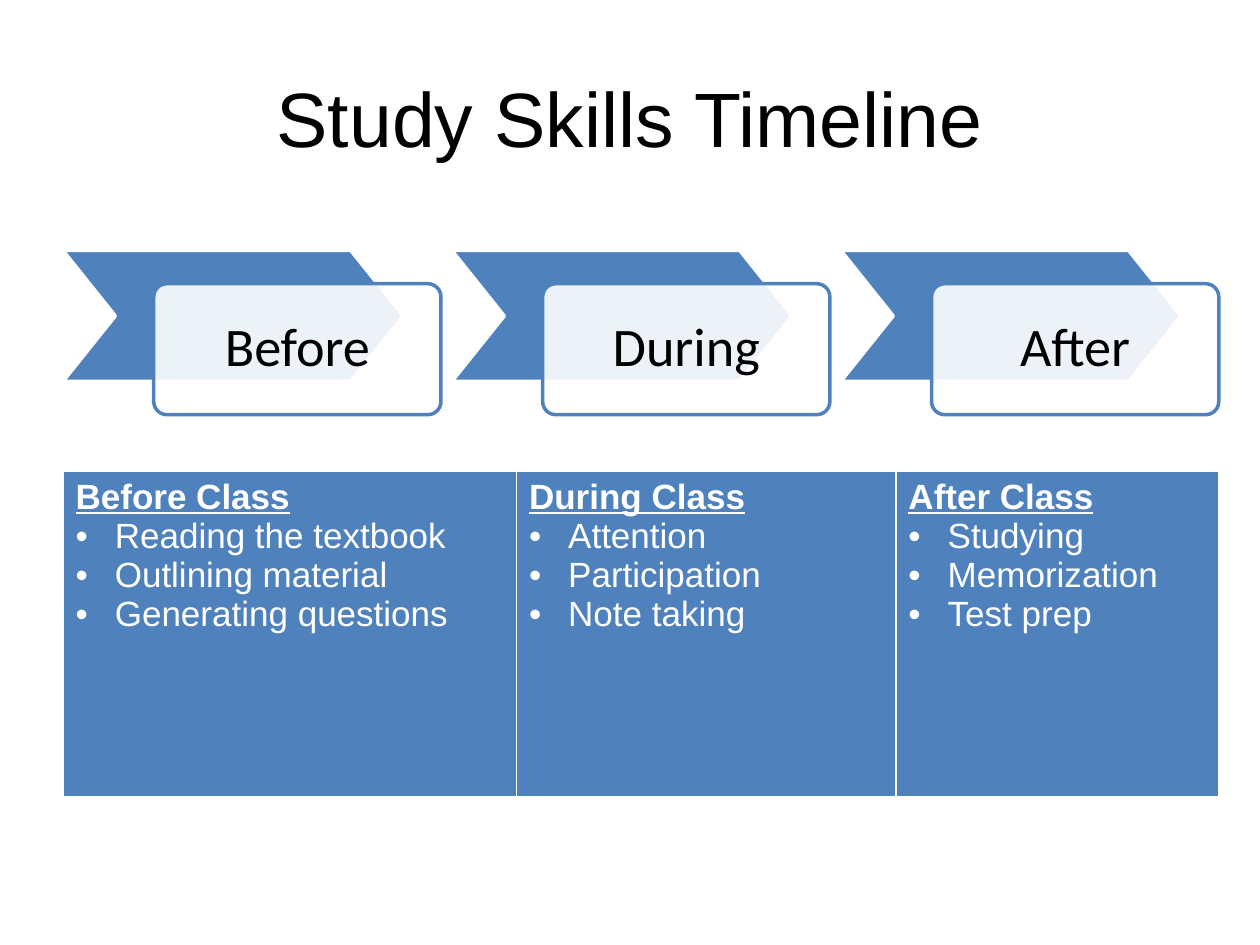
"""Build the study skills timeline slide."""
from lxml import etree
from pptx import Presentation
from pptx import util as u
from pptx.dml.color import RGBColor
from pptx.enum import shapes, text
from pptx.oxml import ns

BLUE = RGBColor(0x4F, 0x81, 0xBD)
WHITE = RGBColor(0xFF, 0xFF, 0xFF)
BLACK = RGBColor(0x00, 0x00, 0x00)

TITLE = "Study Skills Timeline"
STAGES = ["Before", "During", "After"]
SKILLS = {
    "Before Class": ["Reading the textbook", "Outlining material", "Generating questions"],
    "During Class": ["Attention", "Participation", "Note taking"],
    "After Class": ["Studying", "Memorization", "Test prep"],
}
LEFT = 1.27
STAGE_STEP = 7.84
COLUMN_WIDTHS = [9.14, 7.65, 6.5]
BORDERS = {"lnL": 1, "lnR": 1, "lnT": 1, "lnB": 3}


def add_element(parent, tag, **attributes):
    return etree.SubElement(parent, ns.qn(f"a:{tag}"), attributes)


def write_text(para, words, size=20, font="Arial", color=WHITE, align=None,
               bold=False, underline=False, bullet=False):
    if bullet:
        properties = para._p.get_or_add_pPr()
        indent = u.Cm(0.79)
        properties.set("marL", str(indent))
        properties.set("indent", str(-indent))
        add_element(properties, "buFont", typeface="Arial")
        add_element(properties, "buChar", char="•")
    if align is not None:
        para.alignment = align
    span = para.add_run()
    span.text = words
    span.font.size = u.Pt(size)
    span.font.name = font
    span.font.color.rgb = color
    span.font.bold = bold
    span.font.underline = underline


def add_title(page):
    box = page.shapes.add_textbox(u.Cm(LEFT), u.Cm(0.76), u.Cm(22.86), u.Cm(3.18))
    frame = box.text_frame
    frame.word_wrap = True
    frame.vertical_anchor = text.MSO_ANCHOR.MIDDLE
    write_text(frame.paragraphs[0], TITLE, size=44, color=BLACK,
               align=text.PP_ALIGN.CENTER)


def add_block(page, kind, left, top, width, fill, line, adjustment):
    block = page.shapes.add_shape(kind, u.Cm(left), u.Cm(top), u.Cm(width), u.Cm(2.64))
    block.shadow.inherit = False
    block.adjustments[0] = adjustment
    block.fill.solid()
    block.fill.fore_color.rgb = fill
    block.line.color.rgb = line
    block.line.width = u.Pt(2)
    return block


def add_stage(page, left, name):
    add_block(page, shapes.MSO_SHAPE.CHEVRON, left, 5.05, 6.86, BLUE, WHITE, 0.4)
    label = add_block(page, shapes.MSO_SHAPE.ROUNDED_RECTANGLE,
                      left + 1.83, 5.72, 5.79, WHITE, BLUE, 0.1)
    fill_color = label.fill._xPr.find(ns.qn("a:solidFill"))[0]
    add_element(fill_color, "alpha", val="90000")
    frame = label.text_frame
    frame.word_wrap = True
    frame.vertical_anchor = text.MSO_ANCHOR.MIDDLE
    frame.margin_left = frame.margin_right = u.Cm(0.69)
    frame.margin_top = frame.margin_bottom = u.Cm(0.61)
    para = frame.paragraphs[0]
    para.line_spacing = 0.9
    write_text(para, name, size=31, font="Calibri", color=BLACK,
               align=text.PP_ALIGN.CENTER)


def style_cell(cell):
    properties = cell._tc.get_or_add_tcPr()
    for side, points in BORDERS.items():
        border = add_element(properties, side, w=str(u.Pt(points)))
        add_element(add_element(border, "solidFill"), "srgbClr", val=str(WHITE))
    cell.fill.solid()
    cell.fill.fore_color.rgb = BLUE


def add_skills_table(page):
    table = page.shapes.add_table(1, len(SKILLS), u.Cm(LEFT), u.Cm(9.5),
                                  u.Cm(sum(COLUMN_WIDTHS)), u.Cm(6.6)).table
    for index, (heading, skills) in enumerate(SKILLS.items()):
        table.columns[index].width = u.Cm(COLUMN_WIDTHS[index])
        cell = table.cell(0, index)
        style_cell(cell)
        frame = cell.text_frame
        write_text(frame.paragraphs[0], heading, bold=True, underline=True)
        for skill in skills:
            write_text(frame.add_paragraph(), skill, bullet=True)


def main():
    deck = Presentation()
    deck.slide_width, deck.slide_height = u.Cm(25.4), u.Cm(19.05)
    page = deck.slides.add_slide(deck.slide_layouts[6])
    add_title(page)
    for index, name in enumerate(STAGES):
        add_stage(page, LEFT + index * STAGE_STEP, name)
    add_skills_table(page)
    deck.save("out.pptx")


if __name__ == "__main__":
    main()
